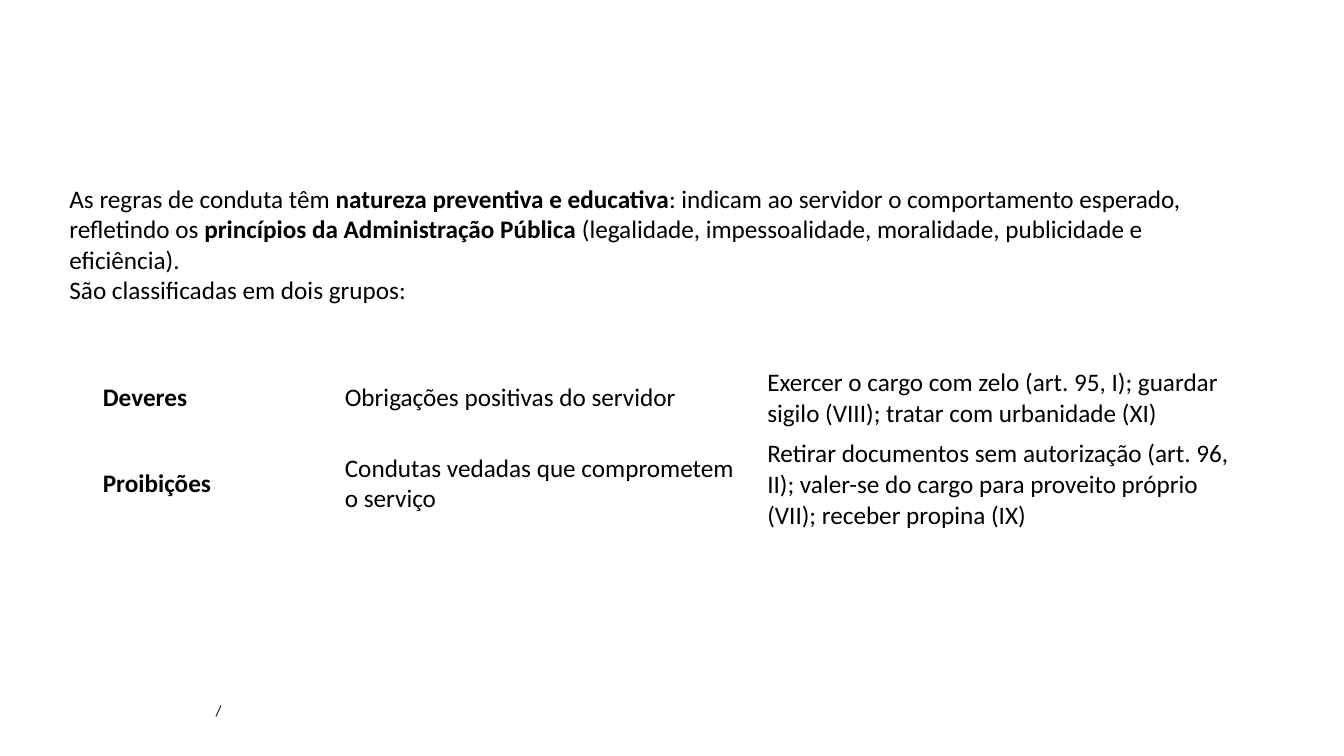
import pptx
import pptx.util
import pptx.dml.color
import pptx.enum.text
from pptx.util import Inches

# Content: (text, bold) runs for each paragraph
INTRO = [
    [
        ("As regras de conduta têm ", False),
        ("natureza preventiva e educativa", True),
        (": indicam ao servidor o comportamento esperado, refletindo os ", False),
        ("princípios da Administração Pública", True),
        (" (legalidade, impessoalidade, moralidade, publicidade e eficiência).", False),
    ],
    [("São classificadas em dois grupos:", False)],
]
FOOTER = [[("/", False)]]
RULE_GROUPS = [
    ("Deveres", "Obrigações positivas do servidor",
     "Exercer o cargo com zelo (art. 95, I); guardar sigilo (VIII); "
     "tratar com urbanidade (XI)"),
    ("Proibições", "Condutas vedadas que comprometem o serviço",
     "Retirar documentos sem autorização (art. 96, II); valer-se do cargo "
     "para proveito próprio (VII); receber propina (IX)"),
]
COLUMN_WIDTHS = [2.4, 4.19, 4.91]
ROW_HEIGHTS = [0.7, 1.0]
COLORS = {"text": "000000"}
FONT = "Calibri"


def write(frame, paragraphs, size):
    """Fill a text frame with paragraphs of (text, bold) runs."""
    frame.word_wrap = True
    for index, runs in enumerate(paragraphs):
        paragraph = frame.add_paragraph() if index else frame.paragraphs[0]
        paragraph.font.name = FONT
        paragraph.font.size = pptx.util.Pt(size)
        paragraph.font.color.rgb = pptx.dml.color.RGBColor.from_string(COLORS["text"])
        for text, bold in runs:
            run = paragraph.add_run()
            run.text = text
            run.font.bold = bold


def add_text(slide, box, paragraphs, size):
    textbox = slide.shapes.add_textbox(*map(Inches, box))
    write(textbox.text_frame, paragraphs, size)


def add_rule_groups(slide, left, top):
    table = slide.shapes.add_table(
        len(ROW_HEIGHTS), len(COLUMN_WIDTHS), Inches(left), Inches(top),
        Inches(sum(COLUMN_WIDTHS)), Inches(sum(ROW_HEIGHTS))).table
    table.first_row = False
    table.horz_banding = False
    for column, width in zip(table.columns, COLUMN_WIDTHS):
        column.width = Inches(width)
    for row, height, texts in zip(table.rows, ROW_HEIGHTS, RULE_GROUPS):
        row.height = Inches(height)
        for index, (cell, text) in enumerate(zip(row.cells, texts)):
            cell.fill.background()
            cell.vertical_anchor = pptx.enum.text.MSO_ANCHOR.MIDDLE
            write(cell.text_frame, [[(text, index == 0)]], 18)


def main():
    presentation = pptx.Presentation()
    presentation.slide_width = Inches(13.33)
    presentation.slide_height = Inches(7.5)
    slide = presentation.slides.add_slide(presentation.slide_layouts[6])

    # Footer, introduction and the two groups of rules
    add_text(slide, (2.04, 6.91, 9.25, 0.29), FOOTER, 11)
    add_text(slide, (0.59, 1.77, 11.64, 3.43), INTRO, 18)
    add_rule_groups(slide, 0.92, 3.6)
    presentation.save("out.pptx")


if __name__ == "__main__":
    main()
